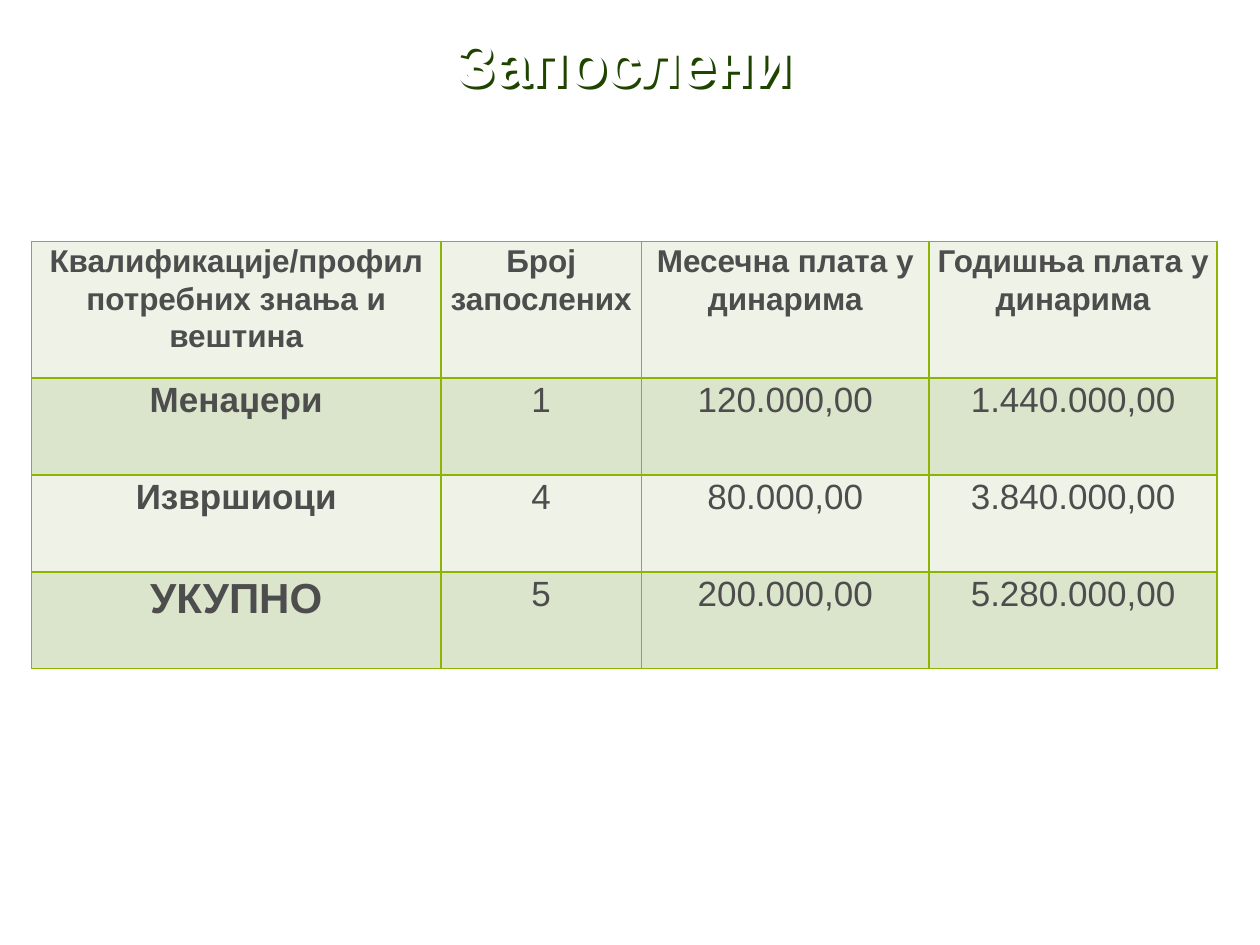
from dataclasses import dataclass

from lxml.etree import SubElement
from pptx import Presentation
from pptx.dml.color import RGBColor
from pptx.enum.text import MSO_ANCHOR, PP_ALIGN
from pptx.oxml import parse_xml
from pptx.oxml.ns import nsdecls, qn
from pptx.util import Pt


@dataclass(frozen=True)
class Theme:
    font: str = "Arial"
    title_color: str = "FFFFFF"
    title_shadow: str = "1F4400"
    text_color: str = "4D4D4D"
    border: str = "8CB400"
    bands: tuple = ("EEF2E7", "DAE5CC")
    title_size: int = 36
    header_size: int = 18
    body_size: int = 20
    total_size: int = 24


class SlideBuilder:
    def __init__(self, page, theme):
        self.page = page
        self.theme = theme

    def style(self, paragraph, size, color, bold):
        paragraph.alignment = PP_ALIGN.CENTER
        font = paragraph.font
        font.name = self.theme.font
        font.size = Pt(size)
        font.bold = bold
        font.color.rgb = RGBColor.from_string(color)

    def title(self, text, left, top, width, height):
        box = self.page.shapes.title
        box.left, box.top, box.width, box.height = map(Pt, (left, top, width, height))
        frame = box.text_frame
        frame.text = text
        frame.vertical_anchor = MSO_ANCHOR.MIDDLE
        self.style(frame.paragraphs[0], self.theme.title_size, self.theme.title_color, True)
        self.shadow(box)

    def shadow(self, box):
        """Cast a shadow from the text of an unfilled box."""
        box._element.spPr.append(parse_xml(
            f'<a:effectLst {nsdecls("a")}>'
            f'<a:outerShdw dist="{Pt(2)}" dir="2700000" algn="ctr" rotWithShape="0">'
            f'<a:srgbClr val="{self.theme.title_shadow}"/></a:outerShdw></a:effectLst>'))

    def table(self, rows, left, top, column_widths, row_heights):
        frame = self.page.shapes.add_table(
            len(rows), len(column_widths), Pt(left), Pt(top),
            Pt(sum(column_widths)), Pt(sum(row_heights)))
        table = frame.table
        for column, width in zip(table.columns, column_widths):
            column.width = Pt(width)
        for row, height in zip(table.rows, row_heights):
            row.height = Pt(height)
        for row_index, values in enumerate(rows):
            for column_index, text in enumerate(values):
                is_header, is_label = row_index == 0, column_index == 0
                size = self.theme.header_size if is_header else self.theme.body_size
                if is_label and row_index == len(rows) - 1:
                    size = self.theme.total_size
                self.cell(table.cell(row_index, column_index), text, size,
                          is_header or is_label, self.theme.bands[row_index % 2])

    def cell(self, cell, text, size, bold, fill):
        cell.text = text
        cell.margin_left = cell.margin_right = Pt(3)
        cell.margin_top = cell.margin_bottom = 0
        paragraph = cell.text_frame.paragraphs[0]
        paragraph.line_spacing = 1.07
        self.style(paragraph, size, self.theme.text_color, bold)
        self.borders(cell)
        cell.fill.solid()
        cell.fill.fore_color.rgb = RGBColor.from_string(fill)

    def borders(self, cell):
        properties = cell._tc.get_or_add_tcPr()
        for side in ("lnL", "lnR", "lnT", "lnB"):
            line = SubElement(properties, qn(f"a:{side}"), w=str(Pt(1)))
            solid = SubElement(line, qn("a:solidFill"))
            SubElement(solid, qn("a:srgbClr"), val=self.theme.border)


def main():
    deck = Presentation()
    deck.slide_width, deck.slide_height = Pt(720), Pt(540)
    page = deck.slides.add_slide(deck.slide_layouts[5])
    builder = SlideBuilder(page, Theme())
    builder.title("Запослени", 18, 15, 677.5, 40.5)
    builder.table(
        [
            ("Квалификације/профил потребних знања и вештина", "Број запослених",
             "Месечна плата у динарима", "Годишња плата у динарима"),
            ("Менаџери", "1", "120.000,00", "1.440.000,00"),
            ("Извршиоци", "4", "80.000,00", "3.840.000,00"),
            ("УКУПНО", "5", "200.000,00", "5.280.000,00"),
        ],
        left=18, top=138,
        column_widths=(234, 114.5, 164.5, 164.5),
        row_heights=(78, 55.4, 55.4, 55.4))
    deck.save("out.pptx")


if __name__ == "__main__":
    main()
